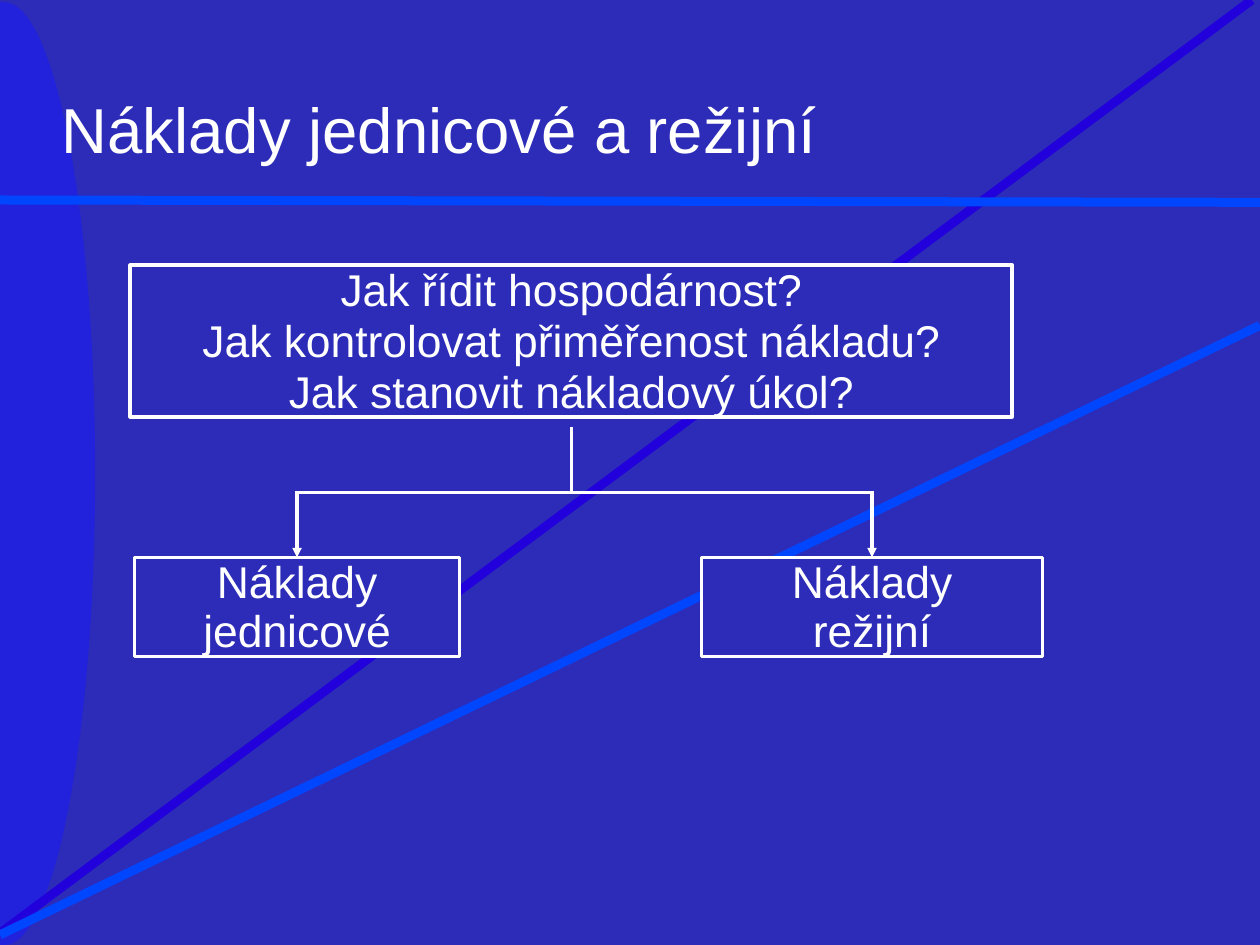
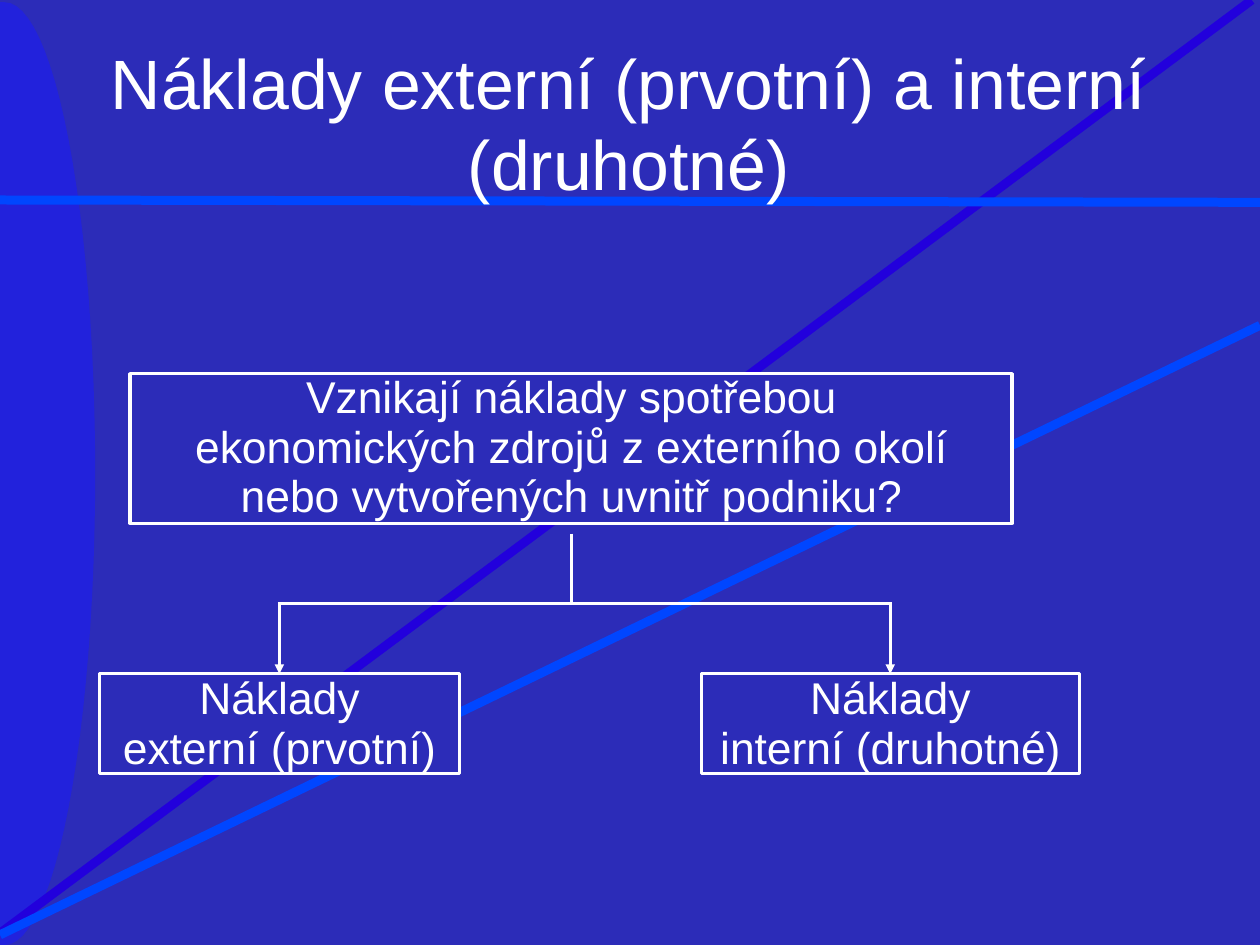
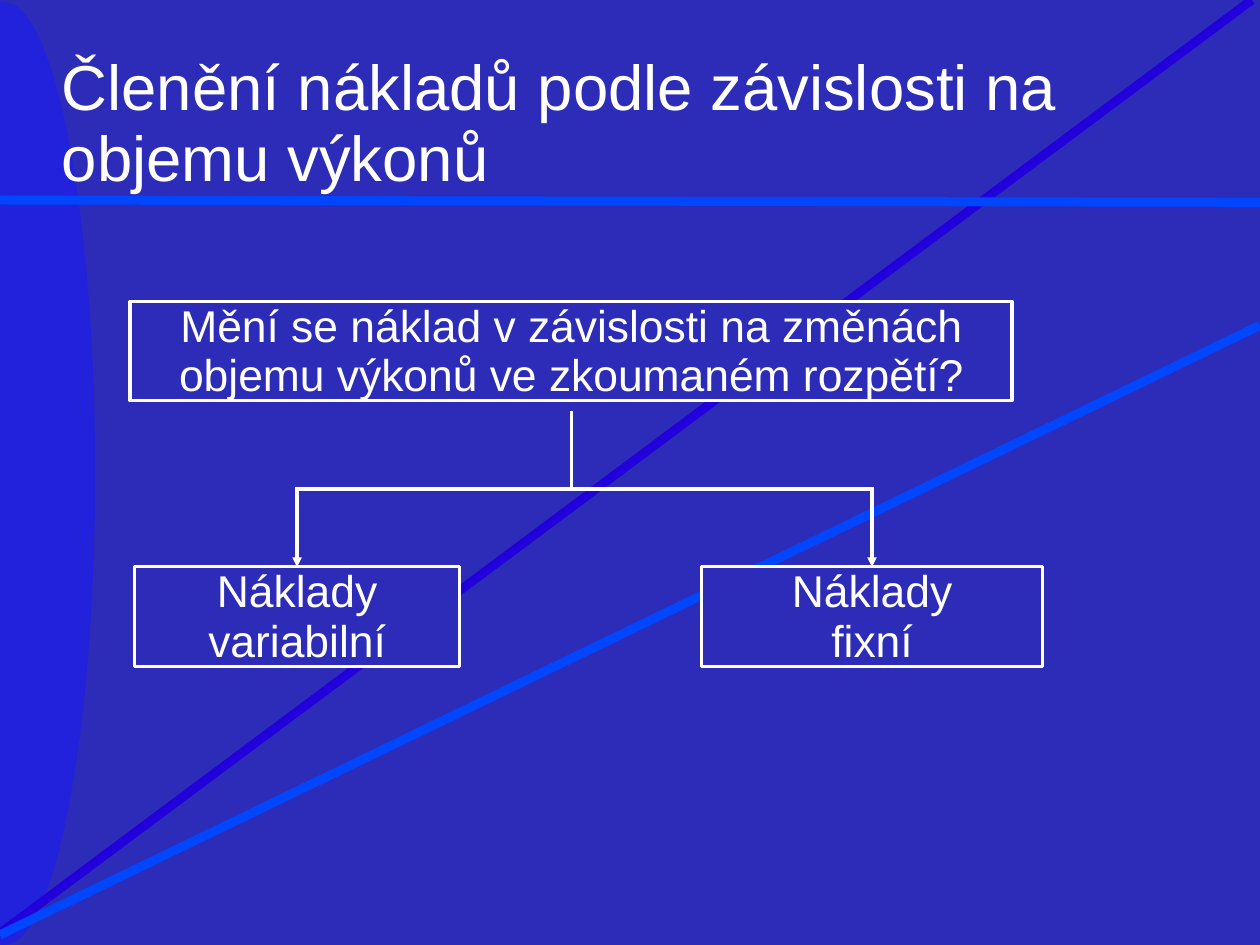
"""Build three slides on the classification of costs."""
from math import cos, pi, sin

from lxml import etree
from pptx import Presentation
from pptx.dml.color import RGBColor
from pptx.enum.shapes import MSO_CONNECTOR, MSO_SHAPE
from pptx.enum.text import MSO_ANCHOR, PP_ALIGN
from pptx.oxml.ns import qn
from pptx.util import Pt

STRAIGHT = MSO_CONNECTOR.STRAIGHT
RECTANGLE = MSO_SHAPE.RECTANGLE
TOP, MIDDLE = MSO_ANCHOR.TOP, MSO_ANCHOR.MIDDLE
LEFT, CENTER = PP_ALIGN.LEFT, PP_ALIGN.CENTER

NAVY = RGBColor(0x2C, 0x2C, 0xB8)
ARC_BLUE = RGBColor(0x22, 0x22, 0xDC)
VIOLET = RGBColor(0x22, 0x00, 0xDC)
AZURE = RGBColor(0x00, 0x46, 0xFF)
WHITE = RGBColor(0xFF, 0xFF, 0xFF)

FONT = "Arial"
WIDTH, HEIGHT = 794.2, 595.4
RAYS = [
    (VIOLET, (789, 0, 0, 588)),
    (AZURE, (WIDTH, 127.5, 0, 126)),
    (AZURE, (WIDTH, 205, 0, 589)),
]
RAY_WIDTH, WIRE_WIDTH = 5.67, 2
ARC_CENTER, ARC_RADII, ARC_STEPS = (3, 298.4), (57, 297), 48

QUESTION_LEFT, QUESTION_WIDTH = 82, 556
LEFT_NODE_RIGHT, RIGHT_NODE_LEFT, NODE_HEIGHT = 289.5, 442, 62.6
WIRE_GAP = 6.5
BOX_SIZE, NODE_SPACING = 28, Pt(31.3)

SLIDES = [
    {
        "title": {"lines": ["Náklady jednicové a režijní"], "at": (39, 56.5, 716, 46),
                  "size": 40, "align": LEFT, "spacing": 1.0},
        "question": {"lines": ["Jak řídit hospodárnost?",
                               "Jak kontrolovat přiměřenost nákladu?",
                               "Jak stanovit nákladový úkol?"],
                     "top": 167, "height": 95.8, "inset": 0, "spacing": Pt(32)},
        "nodes": [["Náklady", "jednicové"], ["Náklady", "režijní"]],
        "widths": (204.5, 215.3), "node_top": 351.2,
    },
    {
        "title": {"lines": ["Náklady externí (prvotní) a interní", "(druhotné)"],
                  "at": (69, 26.6, 655, 103), "size": 44, "align": CENTER,
                  "spacing": Pt(51)},
        "question": {"lines": ["Vznikají náklady spotřebou ekonomických zdrojů z "
                               "externího okolí nebo vytvořených uvnitř podniku?"],
                     "top": 235.4, "height": 94.3, "inset": 38, "spacing": 0.93},
        "nodes": [["Náklady", "externí (prvotní)"], ["Náklady", "interní (druhotné)"]],
        "widths": (226.8, 238.3), "node_top": 424.6,
    },
    {
        "title": {"lines": ["Členění nákladů podle závislosti na objemu výkonů"],
                  "at": (39, 33.1, 716, 91), "size": 40, "align": LEFT,
                  "spacing": Pt(44.6)},
        "question": {"lines": ["Mění se náklad v závislosti na změnách objemu výkonů "
                               "ve zkoumaném rozpětí?"],
                     "top": 190, "height": 62.6, "inset": 20, "spacing": Pt(31.3)},
        "nodes": [["Náklady", "variabilní"], ["Náklady", "fixní"]],
        "widths": (204.5, 215.3), "node_top": 357.2,
    },
]


def set_all(target, values):
    """Set every attribute in values on the target."""
    for name, value in values.items():
        setattr(target, name, value)


def write(shape, lines, size, align, spacing, inset=0, anchor=TOP):
    """Fill a shape with one paragraph for each line."""
    frame = shape.text_frame
    set_all(frame, {"word_wrap": True, "vertical_anchor": anchor,
                    "margin_left": Pt(inset), "margin_right": Pt(inset),
                    "margin_top": 0, "margin_bottom": 0})
    for index, line in enumerate(lines):
        para = frame.add_paragraph() if index else frame.paragraphs[0]
        set_all(para, {"alignment": align, "line_spacing": spacing})
        span = para.add_run()
        span.text = line
        set_all(span.font, {"name": FONT, "size": Pt(size)})
        span.font.color.rgb = WHITE


def add_line(page, ends, color, width, arrow_to=None):
    """Draw a straight line, with an arrowhead joined to a box if one is given."""
    line = page.shapes.add_connector(STRAIGHT, *map(Pt, ends))
    line.line.color.rgb = color
    line.line.width = Pt(width)
    properties = line.element.spPr
    if arrow_to is not None:
        line.end_connect(arrow_to, 0)
        etree.SubElement(properties.find(qn("a:ln")), qn("a:tailEnd"), type="triangle")
    etree.SubElement(properties, qn("a:effectLst"))


def add_box(page, at, lines, spacing, inset=0):
    """Draw an outlined box with centred text."""
    box = page.shapes.add_shape(RECTANGLE, *map(Pt, at))
    box.shadow.inherit = False
    box.fill.solid()
    box.fill.fore_color.rgb = NAVY
    box.line.color.rgb = WHITE
    box.line.width = Pt(WIRE_WIDTH)
    write(box, lines, BOX_SIZE, CENTER, spacing, inset, MIDDLE)
    return box


def add_backdrop(page):
    """Draw the arc at the left edge and the coloured rays."""
    (center_x, center_y), (radius_x, radius_y) = ARC_CENTER, ARC_RADII
    angles = [pi * step / ARC_STEPS - pi / 2 for step in range(ARC_STEPS + 1)]
    curve = [(Pt(center_x + radius_x * cos(angle)), Pt(center_y + radius_y * sin(angle)))
             for angle in angles]
    builder = page.shapes.build_freeform(0, Pt(center_y - radius_y))
    builder.add_line_segments(curve + [(0, Pt(center_y + radius_y))])
    arc = builder.convert_to_shape()
    arc.shadow.inherit = False
    arc.fill.solid()
    arc.fill.fore_color.rgb = ARC_BLUE
    arc.line.fill.background()
    for color, ends in RAYS:
        add_line(page, ends, color, RAY_WIDTH)


def add_tree(page, question, nodes, widths, node_top):
    """Draw the question, its two answers and the wires between them."""
    top, height = question["top"], question["height"]
    add_box(page, (QUESTION_LEFT, top, QUESTION_WIDTH, height),
            question["lines"], question["spacing"], question["inset"])
    trunk_x = QUESTION_LEFT + QUESTION_WIDTH / 2
    trunk_top = top + height + WIRE_GAP
    bar_y = (trunk_top + node_top) / 2
    lefts = (LEFT_NODE_RIGHT - widths[0], RIGHT_NODE_LEFT)
    centers = [left + width / 2 for left, width in zip(lefts, widths)]
    overlap = WIRE_WIDTH / 2
    add_line(page, (trunk_x, trunk_top, trunk_x, bar_y), WHITE, WIRE_WIDTH)
    add_line(page, (centers[0] - overlap, bar_y, centers[1] + overlap, bar_y),
             WHITE, WIRE_WIDTH)
    for lines, left, width, center in zip(nodes, lefts, widths, centers):
        node = add_box(page, (left, node_top, width, NODE_HEIGHT), lines, NODE_SPACING)
        add_line(page, (center, bar_y, center, node_top), WHITE, WIRE_WIDTH, node)


def main():
    """Build and save the deck."""
    deck = Presentation()
    set_all(deck, {"slide_width": Pt(WIDTH), "slide_height": Pt(HEIGHT)})
    backdrop = deck.slide_master.background.fill
    backdrop.solid()
    backdrop.fore_color.rgb = NAVY
    for content in SLIDES:
        page = deck.slides.add_slide(deck.slide_layouts[6])
        add_backdrop(page)
        title = content["title"]
        box = page.shapes.add_textbox(*map(Pt, title["at"]))
        write(box, title["lines"], title["size"], title["align"], title["spacing"])
        add_tree(page, content["question"], content["nodes"], content["widths"],
                 content["node_top"])
    deck.save("out.pptx")


if __name__ == "__main__":
    main()
